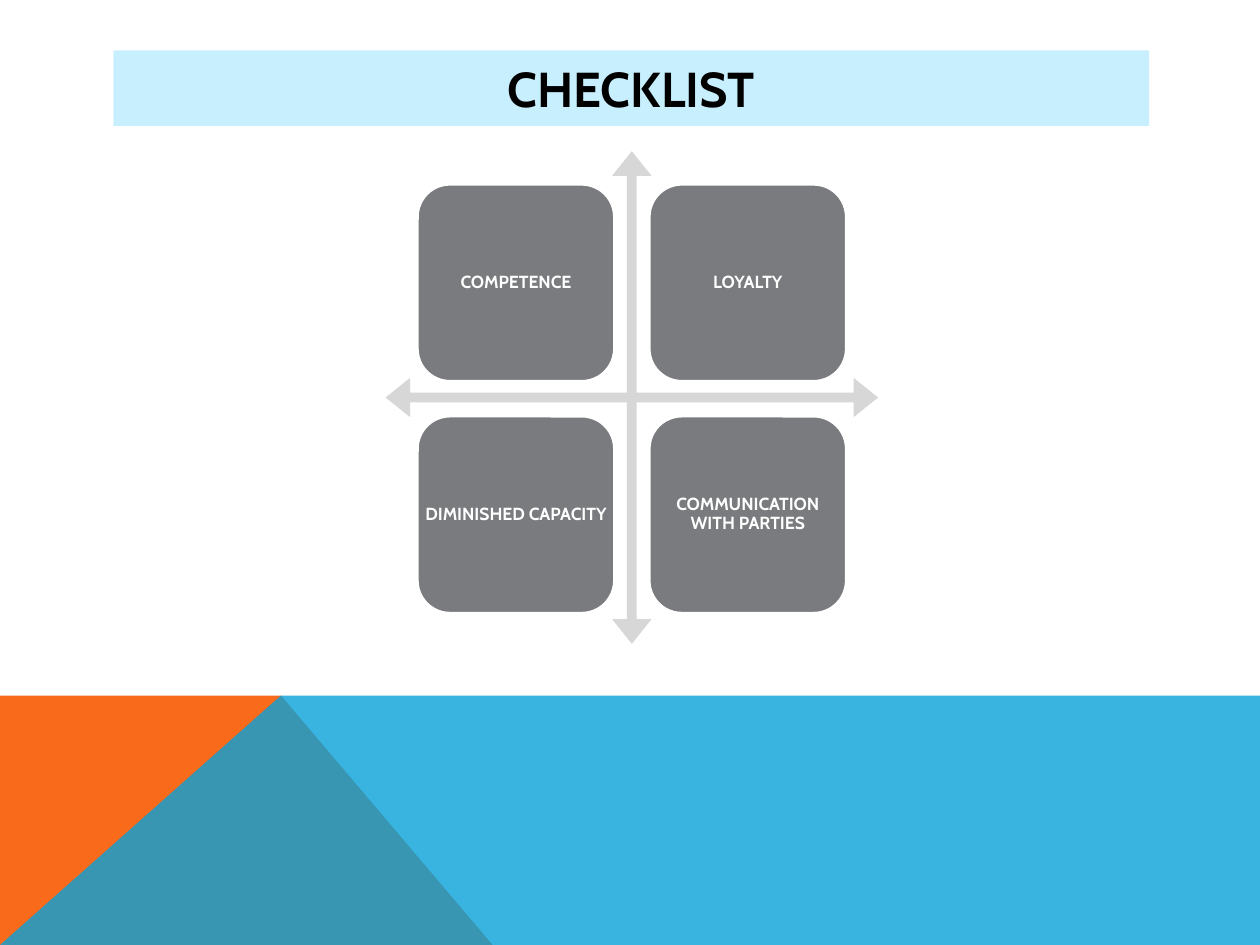
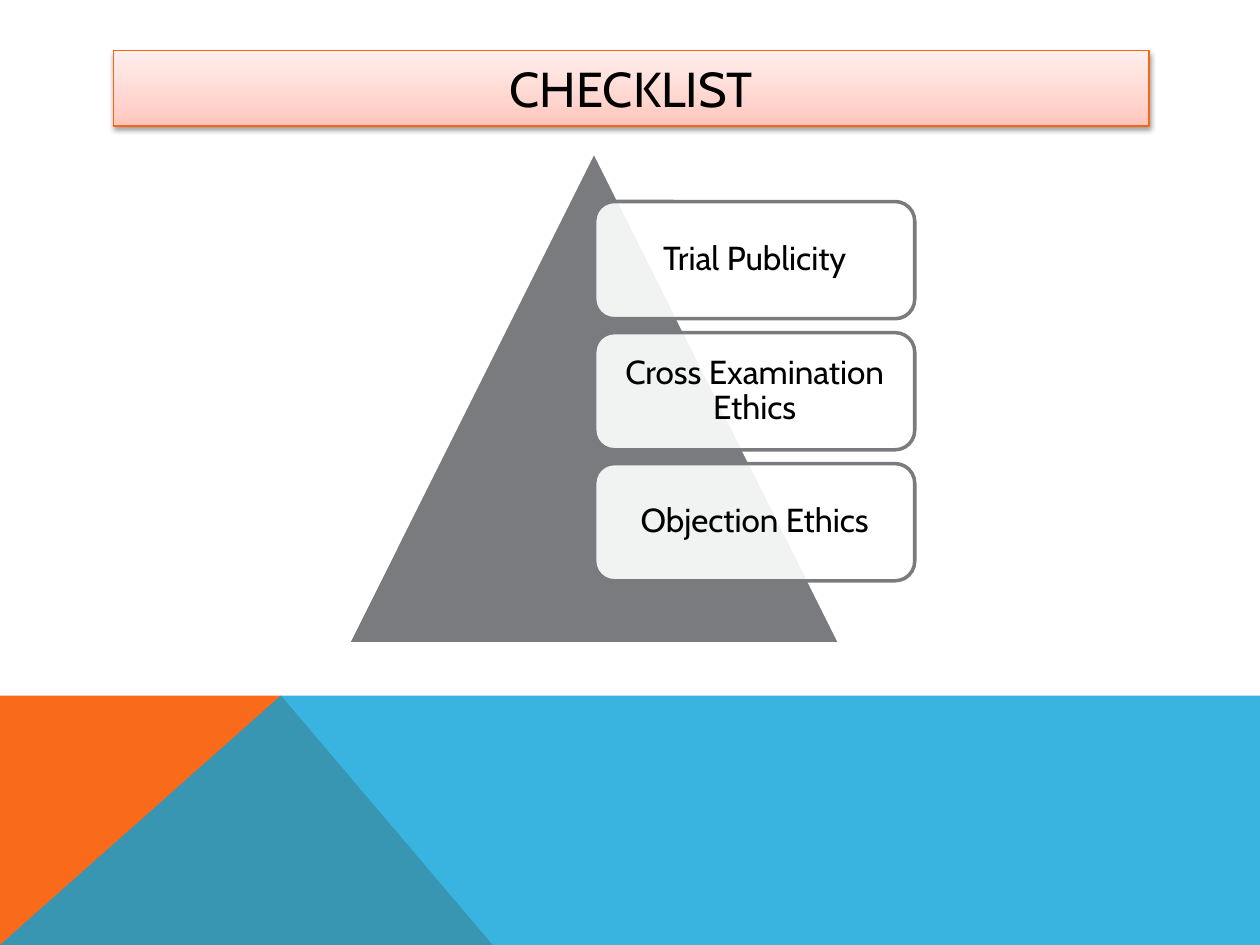
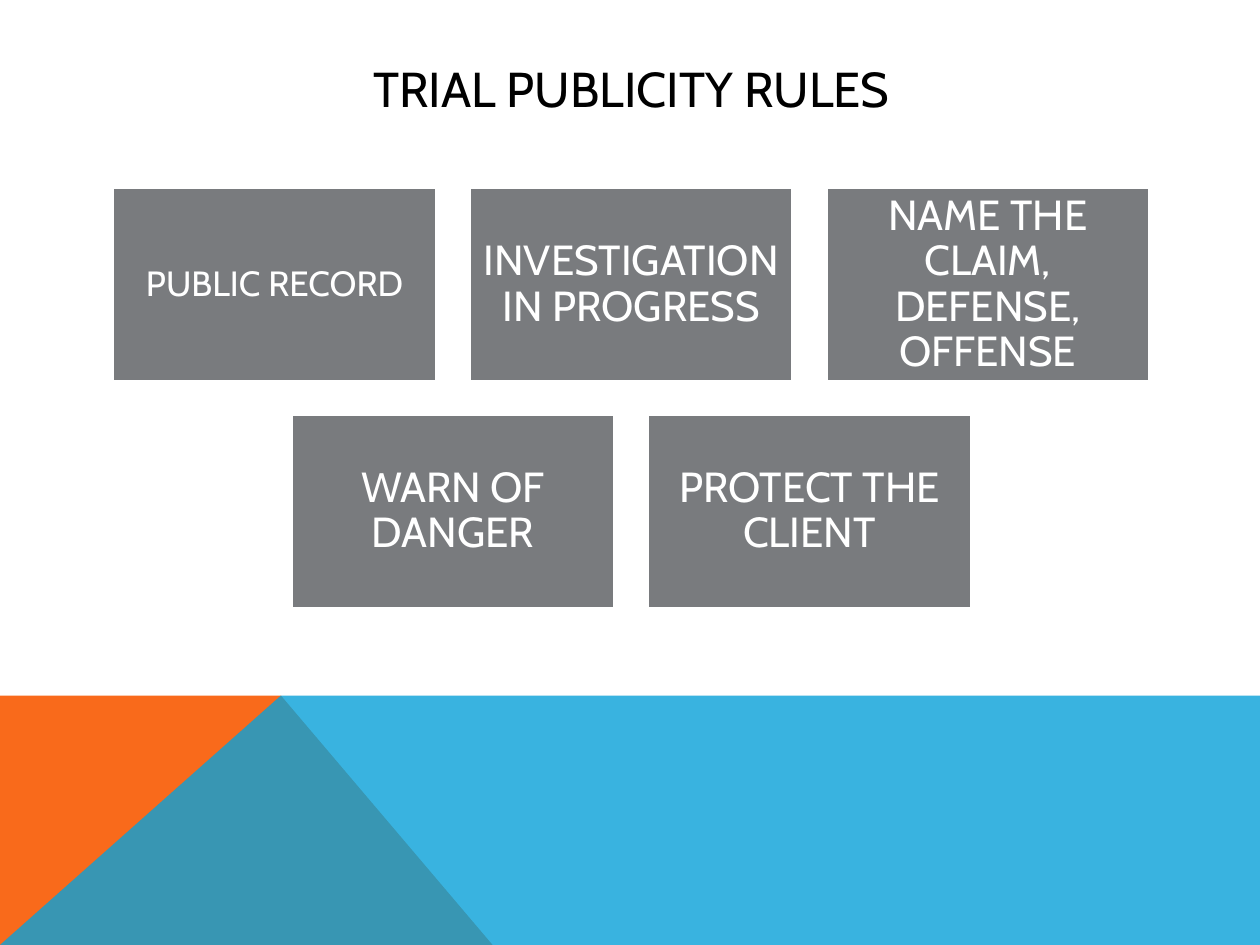
from dataclasses import dataclass

from lxml.etree import SubElement
from pptx import Presentation
from pptx.dml.color import RGBColor as Rgb
from pptx.enum.shapes import MSO_SHAPE as Shape
from pptx.enum.text import MSO_ANCHOR as Anchor, MSO_AUTO_SIZE as AutoSize, PP_ALIGN as Align
from pptx.oxml.ns import qn
from pptx.util import Inches, Pt


@dataclass(frozen=True)
class Theme:
    font: str = "Cabin"
    black: str = "000000"
    white: str = "FFFFFF"
    gray: str = "797B7E"
    arrow_gray: str = "D7D7D8"
    orange: str = "F96A1B"
    blue: str = "08A1D9"
    pale_blue: str = "C8EFFD"
    bar_edge: str = "F96615"
    bar_stops: tuple = ((0, "FFC5BA"), (35, "FFD6CF"), (100, "FFEFED"))
    title_size: int = 28
    quadrant_size: int = 10
    step_size: int = 19
    rule_size: int = 24
    small_rule_size: int = 20
    outline: int = 2


THEME = Theme()
CENTER_X = 5.01


# Formatting helpers
def set_alpha(color_parent, percent):
    color = color_parent.find(".//" + qn("a:srgbClr"))
    SubElement(color, qn("a:alpha")).set("val", str(percent * 1000))


def paint(shape, fill, line=None, alpha=100):
    shape.shadow.inherit = False
    shape.fill.solid()
    shape.fill.fore_color.rgb = Rgb.from_string(fill)
    if alpha < 100:
        set_alpha(shape.element.spPr.find(qn("a:solidFill")), alpha)
    if line:
        shape.line.color.rgb = Rgb.from_string(line)
        shape.line.width = Pt(THEME.outline)
    else:
        shape.line.fill.background()


def write(shape, text, size, color, bold=False):
    frame = shape.text_frame
    frame.text = text
    frame.auto_size = AutoSize.NONE
    frame.vertical_anchor = Anchor.MIDDLE
    paragraph = frame.paragraphs[0]
    paragraph.alignment = Align.CENTER
    font = paragraph.runs[0].font
    font.name, font.size, font.bold = THEME.font, Pt(size), bold
    font.color.rgb = Rgb.from_string(color)


# Elements
def add_preset(slide, preset, left, top, width, height, fill, line=None, alpha=100):
    shape = slide.shapes.add_shape(
        preset, Inches(left), Inches(top), Inches(width), Inches(height))
    paint(shape, fill, line, alpha)
    return shape


def add_label(card, text, size, color, inset, bold=False, wrap=True):
    write(card, text, size, color, bold)
    frame = card.text_frame
    frame.word_wrap = wrap
    frame.margin_left = frame.margin_right = Inches(inset)
    frame.margin_top = frame.margin_bottom = Inches(inset)
    frame.paragraphs[0].line_spacing = 0.9


def add_titled_slide(prs, layout, text, bold=False):
    slide = prs.slides.add_slide(layout)
    title = slide.shapes.title
    title.left, title.top = Inches(0.9), Inches(0.4)
    title.width, title.height = Inches(8.22), Inches(0.6)
    write(title, text, THEME.title_size, THEME.black, bold)
    return slide


def add_footer_bands(slide, layout):
    """Draw the bands, then hand them to the layout that all slides share."""
    bands = (
        (THEME.blue, 80, ((0, 7.5), (2.23, 5.52), (10, 5.52), (10, 7.5))),
        (THEME.orange, 100, ((0, 7.5), (0, 5.52), (2.23, 5.52), (3.91, 7.5))),
    )
    for number, (color, alpha, corners) in enumerate(bands):
        start, *others = [(Inches(x), Inches(y)) for x, y in corners]
        outline = slide.shapes.build_freeform(*start)
        outline.add_line_segments(others, close=True)
        band = outline.convert_to_shape()
        paint(band, color, alpha=alpha)
        band.element.nvSpPr.cNvPr.set("id", str(20 + number))
        layout.shapes.element.insert(2, band.element)


def add_gradient_bar(title):
    title.fill.gradient()
    title.fill.gradient_angle = 90
    properties = title.element.spPr
    stops = properties.find(".//" + qn("a:gsLst"))
    stops.clear()
    for position, color in THEME.bar_stops:
        stop = SubElement(stops, qn("a:gs"), pos=str(position * 1000))
        SubElement(stop, qn("a:srgbClr"), val=color)
    title.line.color.rgb = Rgb.from_string(THEME.bar_edge)
    title.line.width = Pt(0.75)
    effects = SubElement(properties, qn("a:effectLst"))
    shadow = SubElement(effects, qn("a:outerShdw"), blurRad=str(Pt(3.1)),
                        dist=str(Pt(1.6)), dir="5400000", rotWithShape="0")
    SubElement(shadow, qn("a:srgbClr"), val=THEME.black)
    set_alpha(shadow, 38)


# Slide contents
def fill_quadrants(slide):
    paint(slide.shapes.title, THEME.pale_blue)
    cross = add_preset(slide, Shape.QUAD_ARROW, 3.06, 1.2, 3.91, 3.91, THEME.arrow_gray)
    for index, share in enumerate((0.02, 0.04, 0.05)):
        cross.adjustments[index] = share
    duties = (("COMPETENCE", False), ("LOYALTY", False),
              ("DIMINISHED CAPACITY", False), ("COMMUNICATION WITH PARTIES", True))
    side, pitch = 1.57, 1.84
    for index, (duty, wrap) in enumerate(duties):
        row, column = divmod(index, 2)
        card = add_preset(slide, Shape.ROUNDED_RECTANGLE, 3.31 + column * pitch,
                          1.46 + row * pitch, side, side, THEME.gray, THEME.white)
        add_label(card, duty, THEME.quadrant_size, THEME.white, 0.04, True, wrap)


def fill_pyramid(slide):
    add_gradient_bar(slide.shapes.title)
    add_preset(slide, Shape.ISOSCELES_TRIANGLE, 2.76, 1.2, 3.91, 3.91,
               THEME.gray, THEME.white)
    topics = ("Trial Publicity", "Cross Examination Ethics", "Objection Ethics")
    for index, topic in enumerate(topics):
        card = add_preset(slide, Shape.ROUNDED_RECTANGLE, 4.72, 1.6 + index * 1.04,
                          2.54, 0.93, THEME.white, THEME.gray, alpha=90)
        add_label(card, topic, THEME.step_size, THEME.black, 0.08)


def fill_rules(slide):
    rows = (("PUBLIC RECORD", "INVESTIGATION IN PROGRESS",
             "NAME THE CLAIM, DEFENSE, OFFENSE"),
            ("WARN OF DANGER", "PROTECT THE CLIENT"))
    width, height, gap = 2.57, 1.54, 0.26
    for row, rules in enumerate(rows):
        row_width = len(rules) * (width + gap) - gap
        for column, rule in enumerate(rules):
            card = add_preset(slide, Shape.RECTANGLE,
                              CENTER_X - row_width / 2 + column * (width + gap),
                              1.49 + row * (height + gap), width, height,
                              THEME.gray, THEME.white)
            small = rule == "PUBLIC RECORD"
            add_label(card, rule, THEME.small_rule_size if small else THEME.rule_size,
                      THEME.white, 0.08 if small else 0.1)


def main():
    prs = Presentation()
    prs.slide_width, prs.slide_height = Inches(10), Inches(7.5)
    layout = prs.slide_layouts.get_by_name("Title Only")

    quadrants = add_titled_slide(prs, layout, "CHECKLIST", bold=True)
    add_footer_bands(quadrants, layout)
    fill_quadrants(quadrants)
    fill_pyramid(add_titled_slide(prs, layout, "CHECKLIST"))
    fill_rules(add_titled_slide(prs, layout, "TRIAL PUBLICITY RULES"))

    prs.save("out.pptx")


if __name__ == "__main__":
    main()
